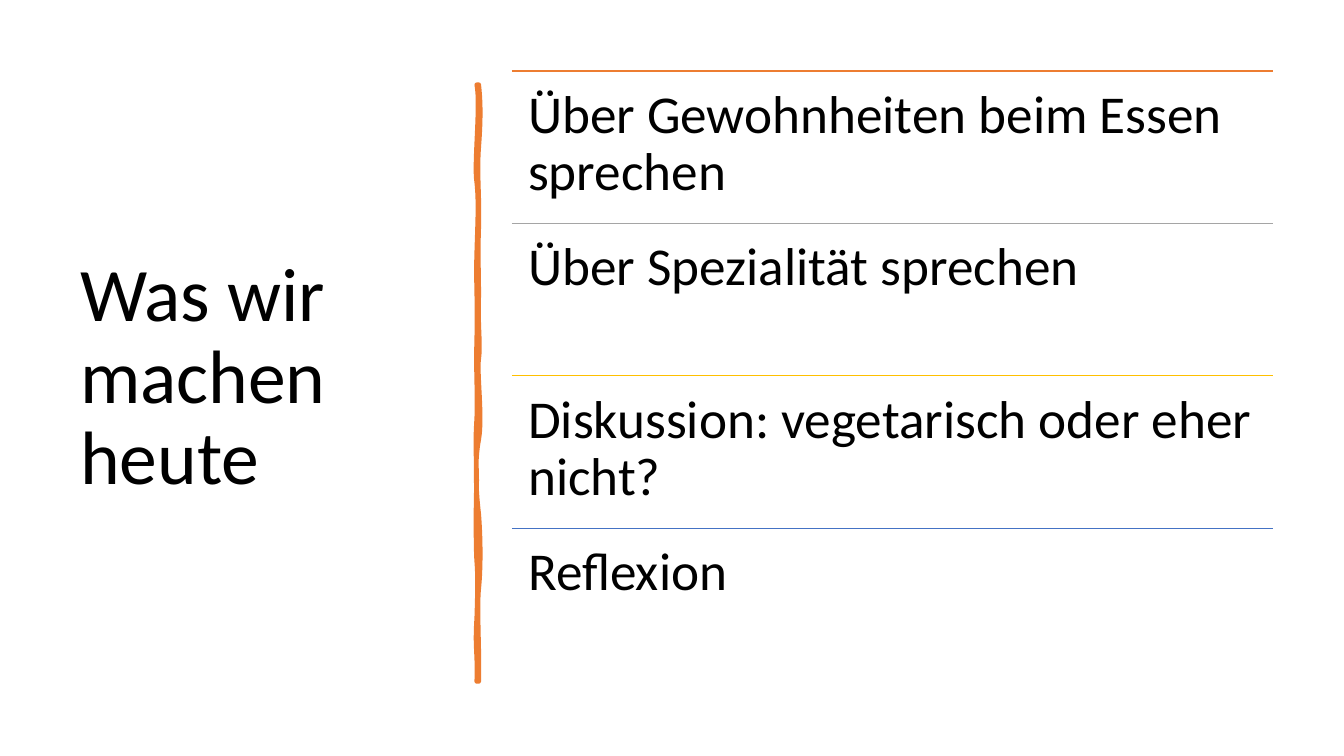
"""Build the agenda slide with a title, a brush-stroke divider and four topics."""
from dataclasses import dataclass

from lxml.etree import SubElement
from pptx import Presentation
from pptx.dml.color import RGBColor as RGB
from pptx.enum.shapes import MSO_CONNECTOR as CONNECTOR
from pptx.enum.text import MSO_ANCHOR as ANCHOR
from pptx.oxml.ns import qn
from pptx.shapes.autoshape import Shape
from pptx.slide import Slide
from pptx.util import Cm, Length, Pt


@dataclass(frozen=True)
class Theme:
    font: str = "Calibri"
    text: RGB = RGB(0x00, 0x00, 0x00)
    orange: RGB = RGB(0xED, 0x7D, 0x31)
    grey: RGB = RGB(0xA5, 0xA5, 0xA5)
    gold: RGB = RGB(0xFF, 0xC0, 0x00)
    blue: RGB = RGB(0x44, 0x72, 0xC4)
    title_size: Length = Pt(54)
    topic_size: Length = Pt(38)
    rule_width: Length = Pt(1)
    brush_width: Length = Pt(3.25)


@dataclass(frozen=True)
class Topic:
    text: str
    color: RGB


@dataclass(frozen=True)
class Box:
    left: float
    top: float
    width: float
    height: float


@dataclass(frozen=True)
class Curve:
    x1: float
    y1: float
    x2: float
    y2: float
    x: float
    y: float


THEME = Theme()
TITLE_BOX = Box(1.77, 1.78, 9.5, 15.52)
TOPIC_BOX = Box(12.9, 1.79, 19.18, 3.84)
TOPICS = (
    Topic("Über Gewohnheiten beim Essen sprechen", THEME.orange),
    Topic("Über Spezialität sprechen", THEME.grey),
    Topic("Diskussion: vegetarisch oder eher nicht?", THEME.gold),
    Topic("Reflexion", THEME.blue),
)
BRUSH_UNIT = Cm(2.54)
BRUSH_START = (4.75, 0.84)
BRUSH = (
    Curve(4.77, 1.02, 4.77, 1.19, 4.75, 1.46),
    Curve(4.73, 1.73, 4.76, 1.95, 4.75, 2.26),
    Curve(4.74, 2.57, 4.75, 2.62, 4.75, 2.94),
    Curve(4.74, 3.25, 4.77, 3.42, 4.75, 3.56),
    Curve(4.73, 3.7, 4.79, 4.14, 4.75, 4.36),
    Curve(4.71, 4.57, 4.72, 4.84, 4.75, 5.1),
    Curve(4.77, 5.36, 4.77, 5.64, 4.75, 5.84),
    Curve(4.73, 6.03, 4.76, 6.5, 4.75, 6.76),
    Curve(4.74, 6.76, 4.73, 6.76, 4.73, 6.76),
    Curve(4.74, 6.46, 4.71, 6.44, 4.73, 6.13),
    Curve(4.74, 5.83, 4.74, 5.7, 4.73, 5.57),
    Curve(4.72, 5.44, 4.72, 4.95, 4.73, 4.77),
    Curve(4.73, 4.59, 4.71, 4.45, 4.73, 4.15),
    Curve(4.74, 3.86, 4.72, 3.73, 4.73, 3.35),
    Curve(4.74, 2.98, 4.72, 2.81, 4.73, 2.5),
    Curve(4.74, 2.18, 4.75, 2.0, 4.73, 1.81),
    Curve(4.7, 1.63, 4.77, 1.04, 4.73, 0.84),
)


def add_text(s: Slide, box: Box, text: str, size: Length, anchor: ANCHOR,
             inset: Length, after: Length) -> None:
    """Add a wrapped text box with one paragraph."""
    sp = s.shapes.add_textbox(Cm(box.left), Cm(box.top), Cm(box.width), Cm(box.height))
    tf = sp.text_frame
    tf.text = text
    tf.word_wrap = True
    tf.vertical_anchor = anchor
    tf.margin_left = tf.margin_right = tf.margin_top = tf.margin_bottom = inset
    p = tf.paragraphs[0]
    p.line_spacing = 0.9
    p.space_after = after
    r = p.runs[0]
    r.font.name = THEME.font
    r.font.size = size
    r.font.color.rgb = THEME.text


def add_rule(s: Slide, box: Box, color: RGB) -> None:
    """Draw a thin line along the top of a box."""
    left, right, top = Cm(box.left), Cm(box.left + box.width), Cm(box.top)
    line = s.shapes.add_connector(CONNECTOR.STRAIGHT, left, top, right, top)
    line.line.color.rgb = color
    line.line.width = THEME.rule_width
    SubElement(line._element.spPr, qn("a:effectLst"))


def bend(sp: Shape) -> None:
    """Turn each three straight segments of an outline into one cubic curve."""
    segments = list(sp._element.iter(qn("a:lnTo")))
    for first, second, third in zip(segments[::3], segments[1::3], segments[2::3]):
        first.tag = qn("a:cubicBezTo")
        for segment in (second, third):
            first.append(segment[0])
            segment.getparent().remove(segment)


def add_brush(s: Slide) -> None:
    """Draw the uneven vertical divider."""
    x, y = (v * BRUSH_UNIT for v in BRUSH_START)
    builder = s.shapes.build_freeform(x, y)
    points = [pt for c in BRUSH for pt in ((c.x1, c.y1), (c.x2, c.y2), (c.x, c.y))]
    builder.add_line_segments([(px * BRUSH_UNIT, py * BRUSH_UNIT) for px, py in points])
    sp = builder.convert_to_shape()
    bend(sp)
    sp.shadow.inherit = False
    sp.fill.solid()
    sp.fill.fore_color.rgb = THEME.orange
    sp.line.color.rgb = THEME.orange
    sp.line.width = THEME.brush_width


def main() -> None:
    """Build and save the presentation."""
    prs = Presentation()
    prs.slide_width, prs.slide_height = Cm(33.87), Cm(19.05)
    s = prs.slides.add_slide(prs.slide_layouts[6])
    add_text(s, TITLE_BOX, "Was wir machen heute", THEME.title_size,
             ANCHOR.MIDDLE, Cm(0.25), Pt(0))
    add_brush(s)
    for i, topic in enumerate(TOPICS):
        box = Box(TOPIC_BOX.left, TOPIC_BOX.top + i * TOPIC_BOX.height,
                  TOPIC_BOX.width, TOPIC_BOX.height)
        add_rule(s, box, topic.color)
        add_text(s, box, topic.text, THEME.topic_size, ANCHOR.TOP, Cm(0.41), Pt(13))
    prs.save("out.pptx")


if __name__ == "__main__":
    main()
